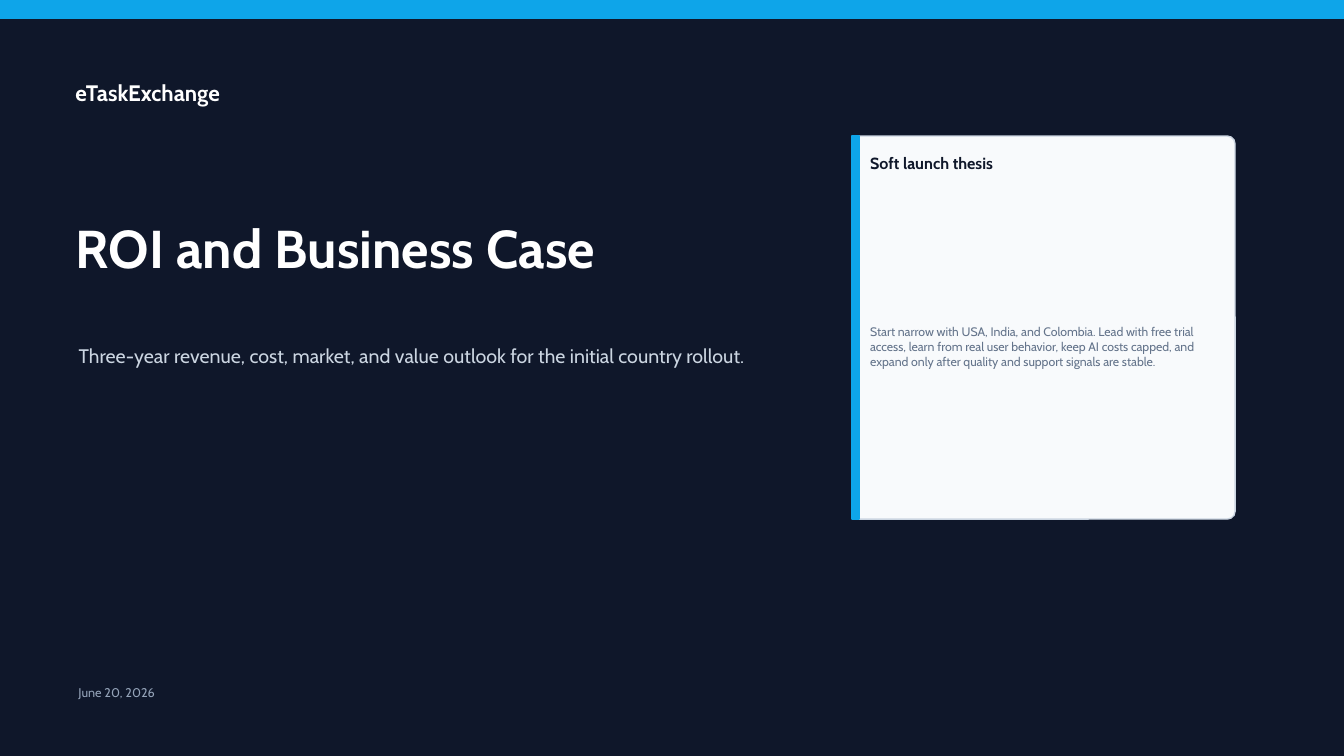
"""Build the cover slide of the ROI and business case deck."""
import pptx
import pptx.dml.color
import pptx.enum.shapes
import pptx.enum.text
import pptx.util

PX = 9144
THEME = {
    "font": "Cabin",
    "night": "0F172A", "sky": "0EA5E9", "white": "FFFFFF", "paper": "F8FAFC",
    "mist": "CBD5E1", "slate": "64748B", "haze": "94A3B8",
    "brand": 16, "title": 38, "subtitle": 14, "heading": 11.5, "body": 8.8, "date": 9,
}
SHAPES = pptx.enum.shapes.MSO_SHAPE


def color(name):
    return pptx.dml.color.RGBColor.from_string(THEME[name])


def write(holder, box, text, size, ink, bold, inset):
    for side, length in zip(("left", "top", "width", "height"), box):
        setattr(holder, side, length * PX)
    frame = holder.text_frame
    frame_format = {
        "text": text, "word_wrap": True,
        "auto_size": pptx.enum.text.MSO_AUTO_SIZE.NONE,
        "vertical_anchor": pptx.enum.text.MSO_ANCHOR.MIDDLE,
        "margin_left": inset * PX, "margin_right": inset * PX,
        "margin_top": inset // 2 * PX, "margin_bottom": inset // 2 * PX,
    }
    for name, value in frame_format.items():
        setattr(frame, name, value)
    paragraph = frame.paragraphs[0]
    paragraph.alignment = pptx.enum.text.PP_ALIGN.LEFT
    paragraph.space_before = pptx.util.Pt(0)
    font = paragraph.runs[0].font
    font_format = {"name": THEME["font"], "size": pptx.util.Pt(THEME[size]), "bold": bold}
    for name, value in font_format.items():
        setattr(font, name, value)
    font.color.rgb = color(ink)


deck = pptx.Presentation()
deck.slide_width, deck.slide_height = 1333 * PX, 750 * PX
cover = deck.slides.add_slide(deck.slide_layouts[0])
cover.background.fill.solid()
cover.background.fill.fore_color.rgb = color("night")

panels = [
    (SHAPES.RECTANGLE, (0, 0, 1333, 18), "sky", "sky"),
    (SHAPES.ROUNDED_RECTANGLE, (845, 135, 380, 380), "paper", "mist"),
    (SHAPES.RECTANGLE, (845, 135, 7, 380), "sky", "sky"),
]
for outline, box, fill, line in panels:
    panel = cover.shapes.add_shape(outline, *(length * PX for length in box))
    panel.shadow.inherit = False
    panel.fill.solid()
    panel.fill.fore_color.rgb = color(fill)
    panel.line.color.rgb = color(line)
    panel.line.width = pptx.util.Pt(1)
    if outline == SHAPES.ROUNDED_RECTANGLE:
        panel.adjustments[0] = 0.02

title, subtitle = cover.placeholders
write(title, (65, 175, 870, 140), "ROI and Business Case", "title", "white", True, 10)
write(subtitle, (68, 322, 750, 62),
      "Three-year revenue, cost, market, and value outlook for the initial country rollout.",
      "subtitle", "mist", False, 10)

labels = [
    ((65, 72, 330, 40), "eTaskExchange", "brand", "white", True, 10),
    ((863, 149, 350, 25), "Soft launch thesis", "heading", "night", True, 0),
    ((863, 183, 352, 322),
     "Start narrow with USA, India, and Colombia. Lead with free trial access, learn from real "
     "user behavior, keep AI costs capped, and expand only after quality and support signals "
     "are stable.", "body", "slate", False, 0),
    ((68, 675, 300, 24), "June 20, 2026", "date", "haze", False, 10),
]
for label in labels:
    write(cover.shapes.add_textbox(0, 0, PX, PX), *label)

deck.save("out.pptx")
